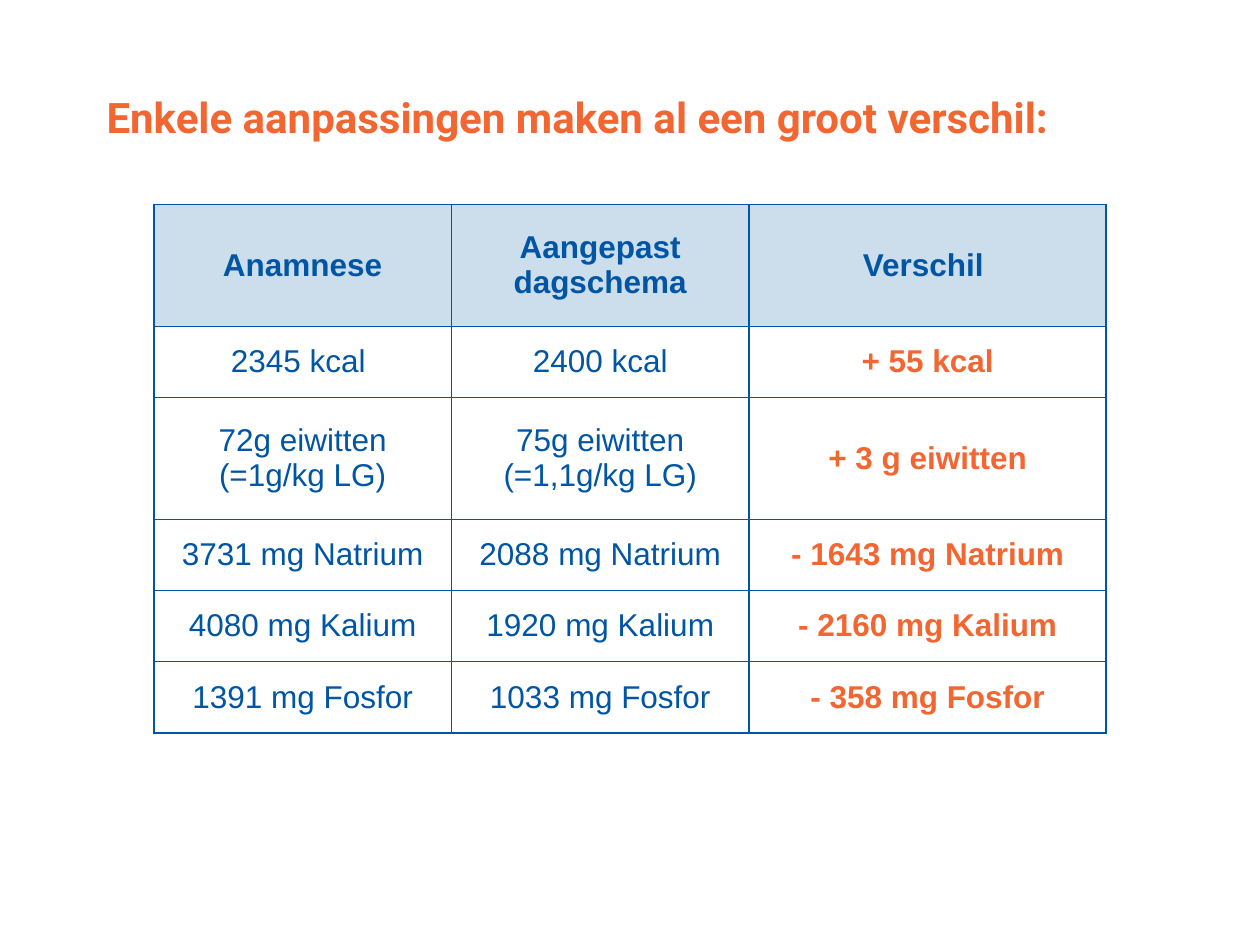
from typing import NamedTuple

from lxml.etree import SubElement as Sub
from pptx import Presentation
from pptx.dml.color import RGBColor as Rgb
from pptx.enum.text import MSO_ANCHOR as Anchor, PP_ALIGN as Align
from pptx.oxml.ns import qn
from pptx.util import Cm, Pt

BLUE, ORANGE = "0055A4", "F26631"


class Row(NamedTuple):
    high: float
    cells: tuple[str, str, str]
    head: bool = False


WIDTHS = (6, 6, 7.2)
ROWS = (
    Row(2.46, ("Anamnese", "Aangepast dagschema", "Verschil "), True),
    Row(1.43, ("2345 kcal ", "2400 kcal", "+ 55 kcal")),
    Row(2.46, ("72g eiwitten\n(=1g/kg LG)", "75g eiwitten\n(=1,1g/kg LG)",
               "+ 3 g eiwitten")),
    Row(1.43, ("3731 mg Natrium", "2088 mg Natrium", "- 1643 mg Natrium")),
    Row(1.43, ("4080 mg Kalium", "1920 mg Kalium", "- 2160 mg Kalium")),
    Row(1.45, ("1391 mg Fosfor", "1033 mg Fosfor", "- 358 mg Fosfor")),
)


def paint(item, color: str) -> None:
    """Set the colour of a font's or a cell's fill."""
    item.fill.solid()
    item.fill.fore_color.rgb = Rgb.from_string(color)


def write(frame, text: str, *, size: int = 18, face: str = "Arial",
          color: str = BLUE, bold: bool = False, align=Align.CENTER) -> None:
    """Fill a text frame, one paragraph per line."""
    frame.text = text
    frame.word_wrap = True
    for par in frame.paragraphs:
        par.alignment = align
        for run in par.runs:
            font = run.font
            font.size, font.name, font.bold = Pt(size), face, bold
            paint(font, color)


def edge(cell, color: str, width: int = 1) -> None:
    """Draw the four borders of a cell."""
    props = cell._tc.get_or_add_tcPr()
    for side in "LRTB":
        line = Sub(props, qn(f"a:ln{side}"), w=str(Pt(width)))
        Sub(Sub(line, qn("a:solidFill")), qn("a:srgbClr"), val=color)


def tint(cell, color: str, share: int) -> None:
    """Give a cell a see-through fill, opaque for share percent."""
    paint(cell, color)
    tone = cell._tc.tcPr.find(qn("a:solidFill"))[0]
    Sub(tone, qn("a:alpha"), val=str(share * 1000))


def draw_table(slide, rows: tuple[Row, ...]) -> None:
    frame = slide.shapes.add_table(
        len(rows), len(WIDTHS), Cm(3.1), Cm(4.12),
        Cm(sum(WIDTHS)), Cm(sum(row.high for row in rows)))
    table = frame.table
    table.first_row = table.horz_banding = False
    for col, wide in zip(table.columns, WIDTHS):
        col.width = Cm(wide)
    for r, row in enumerate(rows):
        table.rows[r].height = Cm(row.high)
        for c, text in enumerate(row.cells):
            cell = table.cell(r, c)
            cell.vertical_anchor = Anchor.MIDDLE
            change = c == 2 and not row.head
            write(cell.text_frame, text, bold=row.head or change,
                  color=ORANGE if change else BLUE)
            edge(cell, BLUE)
            if row.head:
                tint(cell, BLUE, 20)
            else:
                cell.fill.background()


def main() -> None:
    deck = Presentation()
    deck.slide_width, deck.slide_height = Cm(25.4), Cm(19.05)
    slide = deck.slides.add_slide(deck.slide_layouts[6])

    # Heading
    box = slide.shapes.add_textbox(Cm(1.9), Cm(1.73), Cm(22.2), Cm(1.28))
    write(box.text_frame, "Enkele aanpassingen maken al een groot verschil:",
          size=24, face="Roboto", color=ORANGE, bold=True, align=Align.LEFT)

    # Comparison of intake before and after
    draw_table(slide, ROWS)

    deck.save("out.pptx")


if __name__ == "__main__":
    main()
